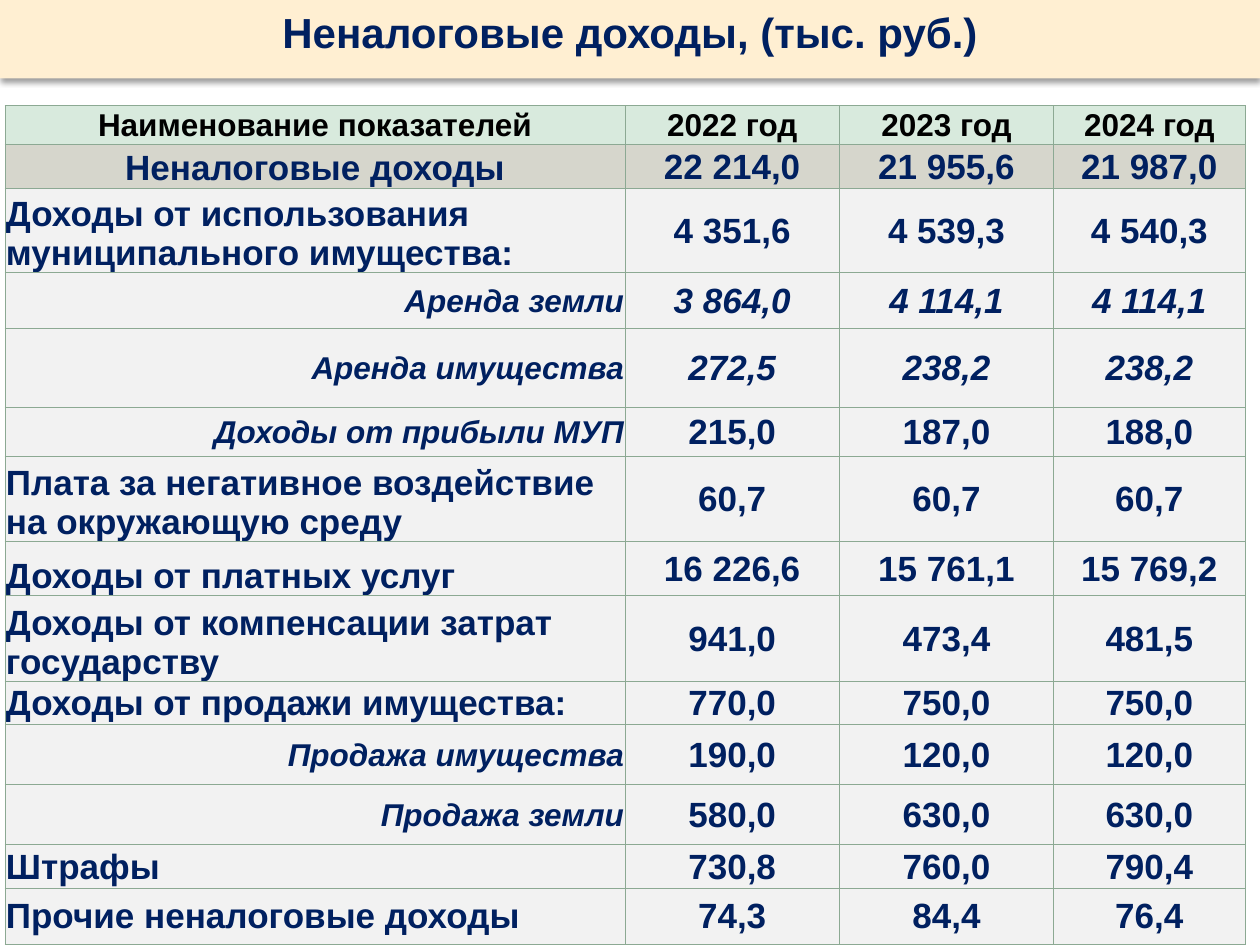
from lxml import etree
from pptx import Presentation
from pptx.dml.color import RGBColor
from pptx.enum.shapes import MSO_SHAPE
from pptx.enum.text import MSO_ANCHOR, PP_ALIGN
from pptx.oxml.ns import qn
from pptx.util import Cm, Pt

LEFT, CENTER, RIGHT = PP_ALIGN.LEFT, PP_ALIGN.CENTER, PP_ALIGN.RIGHT
TOP, MIDDLE, BOTTOM = MSO_ANCHOR.TOP, MSO_ANCHOR.MIDDLE, MSO_ANCHOR.BOTTOM
RECTANGLE = MSO_SHAPE.RECTANGLE

NAVY = RGBColor(0x00, 0x20, 0x60)
BLACK = RGBColor(0x00, 0x00, 0x00)
CREAM = RGBColor(0xFF, 0xEF, 0xD2)
MINT = RGBColor(0xD8, 0xEA, 0xDD)
STONE = RGBColor(0xD6, 0xD6, 0xCC)
PALE = RGBColor(0xF2, 0xF2, 0xF2)
GREEN = RGBColor(0x8C, 0xA9, 0x93)

FONT = "Arial"
COLUMN_WIDTHS = (12.5, 4.32, 4.32, 3.86)

HEADER = {"size": 18, "color": BLACK}
SUBITEM = {"size": 18, "italic": True, "align": RIGHT}
ITEM = {"align": LEFT}
LOW_ITEM = {"align": LEFT, "anchor": BOTTOM}
TOTAL = {"anchor": BOTTOM}
VALUE = {}
ITALIC_VALUE = {"italic": True}

ROWS = (
    (0.79, MINT, HEADER, HEADER, ("Наименование показателей", "2022 год", "2023 год", "2024 год")),
    (0.87, STONE, TOTAL, VALUE, ("Неналоговые доходы", "22 214,0", "21 955,6", "21 987,0")),
    (1.71, PALE, LOW_ITEM, VALUE,
     ("Доходы от использования муниципального имущества:", "4 351,6", "4 539,3", "4 540,3")),
    (1.13, PALE, SUBITEM, ITALIC_VALUE, ("Аренда земли", "3 864,0", "4 114,1", "4 114,1")),
    (1.59, PALE, SUBITEM, ITALIC_VALUE, ("Аренда имущества", "272,5", "238,2", "238,2")),
    (0.99, PALE, SUBITEM, VALUE, ("Доходы от прибыли МУП", "215,0", "187,0", "188,0")),
    (1.71, PALE, LOW_ITEM, VALUE,
     ("Плата за негативное воздействие на окружающую среду", "60,7", "60,7", "60,7")),
    (1.09, PALE, LOW_ITEM, VALUE, ("Доходы от платных услуг", "16 226,6", "15 761,1", "15 769,2")),
    (1.73, PALE, LOW_ITEM, VALUE,
     ("Доходы от компенсации затрат государству", "941,0", "473,4", "481,5")),
    (0.87, PALE, ITEM, VALUE, ("Доходы от продажи имущества:", "770,0", "750,0", "750,0")),
    (1.21, PALE, SUBITEM, VALUE, ("Продажа имущества", "190,0", "120,0", "120,0")),
    (1.21, PALE, SUBITEM, VALUE, ("Продажа земли", "580,0", "630,0", "630,0")),
    (0.87, PALE, ITEM, VALUE, ("Штрафы", "730,8", "760,0", "790,4")),
    (1.13, PALE, ITEM, VALUE, ("Прочие неналоговые доходы", "74,3", "84,4", "76,4")),
)


def write_text(frame, text, size=20, color=NAVY, italic=False, align=CENTER):
    """Fill a text frame with one bold paragraph."""
    frame.word_wrap = True
    paragraph = frame.paragraphs[0]
    paragraph.alignment = align
    run = paragraph.add_run()
    run.text = text
    run.font.name = FONT
    run.font.size = Pt(size)
    run.font.bold = True
    run.font.italic = italic
    run.font.color.rgb = color


def add_color(parent, color):
    """Append an RGB colour element and return it."""
    return etree.SubElement(parent, qn("a:srgbClr"), val=str(color))


def draw_borders(cell):
    """Outline a cell with thin green lines."""
    properties = cell._tc.get_or_add_tcPr()
    for side in ("a:lnL", "a:lnR", "a:lnT", "a:lnB"):
        line = etree.SubElement(properties, qn(side), w=str(Pt(0.5)))
        add_color(etree.SubElement(line, qn("a:solidFill")), GREEN)


def fill_cell(cell, text, background, anchor=MIDDLE, **text_format):
    """Set the borders, background, margins and text of a cell."""
    draw_borders(cell)
    cell.fill.solid()
    cell.fill.fore_color.rgb = background
    cell.margin_left = cell.margin_right = cell.margin_top = Cm(0.02)
    cell.margin_bottom = Cm(0)
    cell.vertical_anchor = anchor
    write_text(cell.text_frame, text, **text_format)


def add_income_table(slide):
    """Add the table of non-tax income by year."""
    height = sum(row[0] for row in ROWS)
    table = slide.shapes.add_table(
        len(ROWS), len(COLUMN_WIDTHS), Cm(0.1), Cm(2.13),
        Cm(sum(COLUMN_WIDTHS)), Cm(height)).table
    table.first_row = False
    table.horz_banding = False
    for column, width in zip(table.columns, COLUMN_WIDTHS):
        column.width = Cm(width)
    for row, (row_height, background, label_format, value_format, texts) in zip(table.rows, ROWS):
        row.height = Cm(row_height)
        formats = (label_format,) + (value_format,) * (len(texts) - 1)
        for cell, text, cell_format in zip(row.cells, texts, formats):
            fill_cell(cell, text, background, **cell_format)


def add_shadow(shape):
    """Give a shape a soft shadow that falls downwards."""
    shape.shadow.inherit = False
    effects = shape._element.spPr.find(qn("a:effectLst"))
    shadow = etree.SubElement(
        effects, qn("a:outerShdw"), blurRad=str(Pt(3.1)), dist=str(Pt(2)),
        dir="5400000", rotWithShape="0")
    etree.SubElement(add_color(shadow, BLACK), qn("a:alpha"), val="38000")


def add_title_band(slide, text, width):
    """Add the title band across the top of the slide."""
    band = slide.shapes.add_shape(RECTANGLE, Cm(0), Cm(0), width, Cm(1.58))
    band.fill.solid()
    band.fill.fore_color.rgb = CREAM
    band.line.fill.background()
    add_shadow(band)
    band.text_frame.vertical_anchor = TOP
    write_text(band.text_frame, text, size=24)


def main():
    """Build and save the slide."""
    presentation = Presentation()
    presentation.slide_width = Cm(25.4)
    presentation.slide_height = Cm(19.05)
    slide = presentation.slides.add_slide(presentation.slide_layouts[6])
    add_income_table(slide)
    add_title_band(slide, "Неналоговые доходы, (тыс. руб.)", presentation.slide_width)
    presentation.save("out.pptx")


if __name__ == "__main__":
    main()
